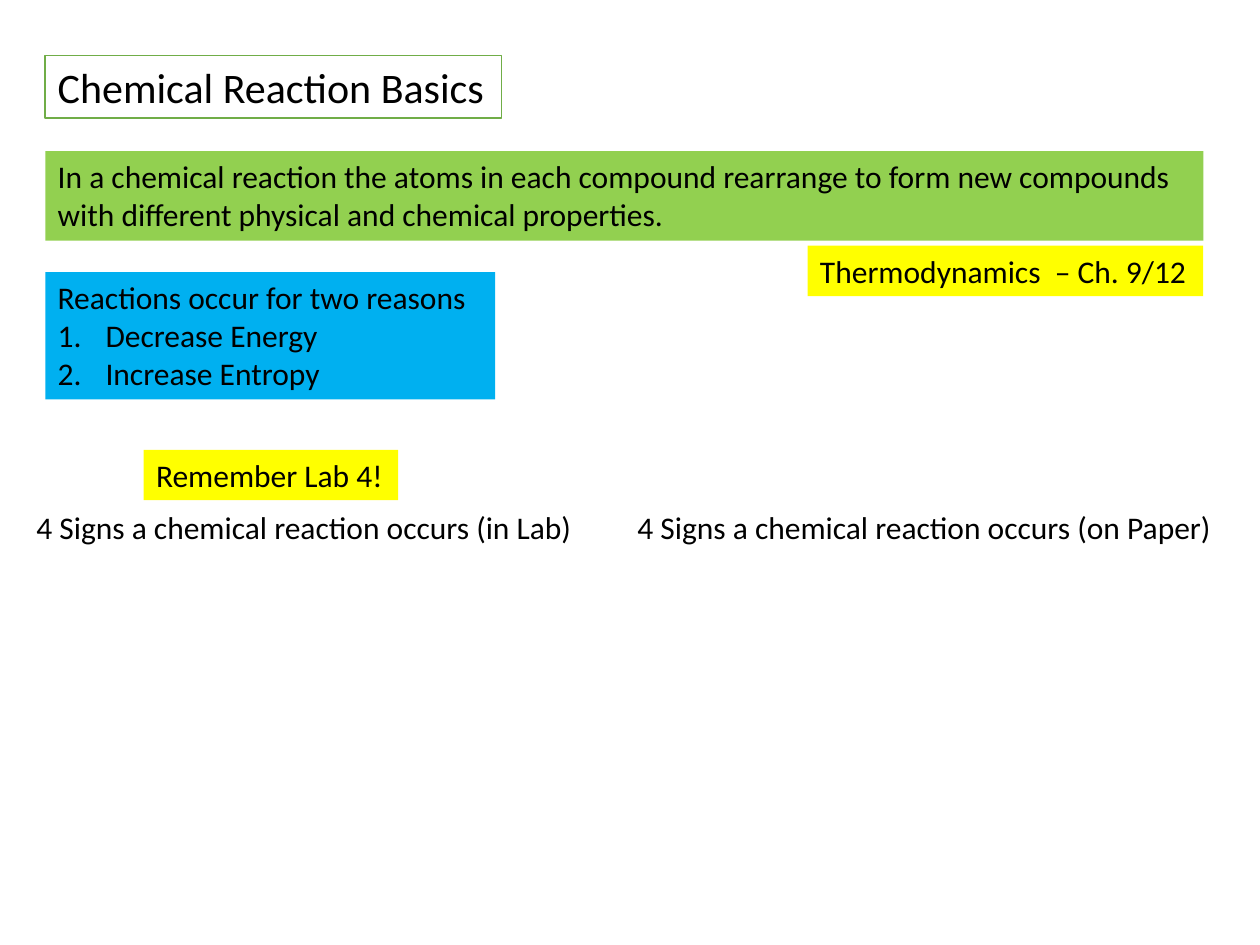
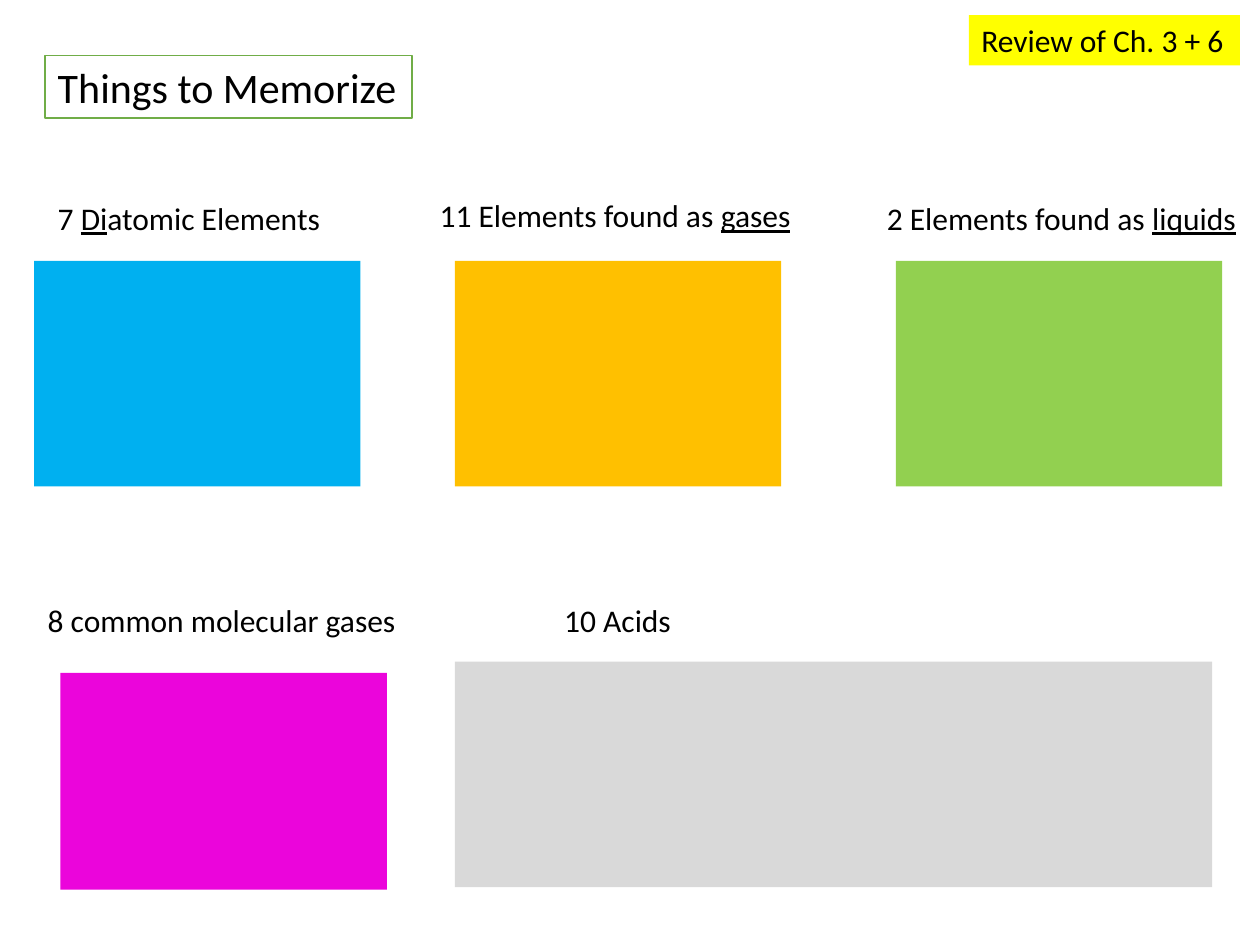
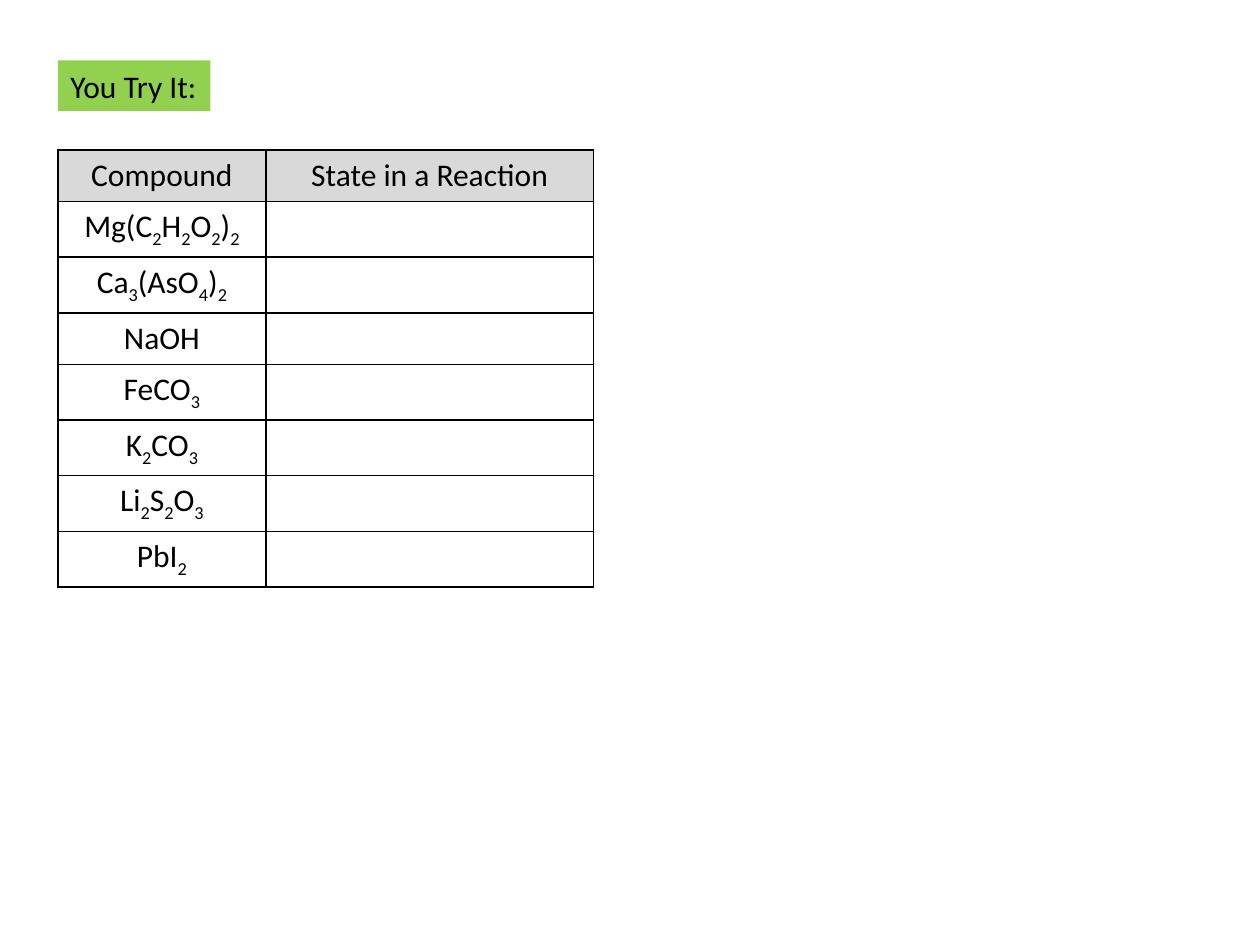
"""Build three chemistry slides on reactions, facts to memorize and a practice table."""
from itertools import groupby

from lxml import etree
from pptx import Presentation
from pptx import util as u
from pptx.dml.color import RGBColor
from pptx.enum import shapes, text
from pptx.oxml.ns import qn

FONT = "Calibri"
COLORS = {
    "ink": "000000", "paper": "FFFFFF", "title_edge": "70AD47", "green": "92D050",
    "blue": "00B0F0", "yellow": "FFFF00", "orange": "FFC000", "grey": "D9D9D9",
    "magenta": "EB05DB",
}
BODY_SIZE, TITLE_SIZE = 18, 24
LABEL_HEIGHT = 0.4
PANEL_WIDTH, PANEL_HEIGHT = 2.59, 1.79
FORMULAS = ["Mg(C2H2O2)2", "Ca3(AsO4)2", "NaOH", "FeCO3", "K2CO3", "Li2S2O3", "PbI2"]


def color(name):
    """Return the named colour."""
    return RGBColor.from_string(COLORS[name])


def paint(target, fill):
    """Give a shape or a cell a solid fill."""
    target.fill.solid()
    target.fill.fore_color.rgb = color(fill)


def add_run(paragraph, words, size=BODY_SIZE):
    """Append one run in the shared font and return it."""
    run = paragraph.add_run()
    run.text = words
    run.font.name = FONT
    run.font.size = u.Pt(size)
    run.font.color.rgb = color("ink")
    return run


def add_underlined(paragraph, words, size):
    """Write words, underlining what stands between bars."""
    for index, part in enumerate(words.split("|")):
        run = add_run(paragraph, part, size)
        if index % 2:
            run.font.underline = True


def add_formula(paragraph, formula):
    """Write a chemical formula with its digits as subscripts."""
    for is_count, symbols in groupby(formula, str.isdigit):
        run = add_run(paragraph, "".join(symbols))
        if is_count:
            run.font._element.set("baseline", "-25000")


def number_paragraph(paragraph):
    """Turn a paragraph into an item of a numbered list."""
    properties = paragraph._p.get_or_add_pPr()
    properties.set("marL", str(u.Inches(0.38)))
    properties.set("indent", str(-u.Inches(0.38)))
    etree.SubElement(properties, qn("a:buFont"), typeface="+mj-lt")
    etree.SubElement(properties, qn("a:buAutoNum"), type="arabicPeriod")


def add_label(slide, words, left, top, width, height=LABEL_HEIGHT, fill=None,
              size=BODY_SIZE, wrap=False, steps=()):
    """Add a text box, optionally filled and followed by numbered steps."""
    label = slide.shapes.add_textbox(*map(u.Inches, (left, top, width, height)))
    if fill:
        paint(label, fill)
    frame = label.text_frame
    frame.word_wrap = wrap
    frame.auto_size = text.MSO_AUTO_SIZE.SHAPE_TO_FIT_TEXT
    add_underlined(frame.paragraphs[0], words, size)
    for step in steps:
        item = frame.add_paragraph()
        number_paragraph(item)
        add_run(item, step)
    return label


def add_title(slide, words, width):
    """Add the outlined slide title."""
    title = add_label(slide, words, 0.36, 0.44, width, 0.5, "paper", TITLE_SIZE)
    title.line.color.rgb = color("title_edge")
    title.line.width = u.Pt(1)


def add_panel(slide, fill, left, top, width=PANEL_WIDTH, height=PANEL_HEIGHT):
    """Add an empty coloured answer panel."""
    panel = slide.shapes.add_shape(
        shapes.MSO_SHAPE.RECTANGLE, *map(u.Inches, (left, top, width, height)))
    panel.shadow.inherit = False
    paint(panel, fill)
    panel.line.fill.background()


def add_borders(cell):
    """Draw a thin line on all four sides of a cell."""
    properties = cell._tc.get_or_add_tcPr()
    for side in ("lnL", "lnR", "lnT", "lnB"):
        edge = etree.SubElement(properties, qn(f"a:{side}"), w=str(u.Pt(1)))
        ink = etree.SubElement(edge, qn("a:solidFill"))
        etree.SubElement(ink, qn("a:srgbClr"), val=COLORS["ink"])


def add_state_table(slide):
    """Add the table of compounds with blank states."""
    row_count, row_height, widths = len(FORMULAS) + 1, 0.41, (1.65, 2.6)
    states = slide.shapes.add_table(
        row_count, 2, u.Inches(0.46), u.Inches(1.19),
        u.Inches(sum(widths)), u.Inches(row_height * row_count)).table
    states.first_row = states.horz_banding = False
    for column, width in zip(states.columns, widths):
        column.width = u.Inches(width)
    for row in states.rows:
        row.height = u.Inches(row_height)
    for cell in states.iter_cells():
        add_borders(cell)
        cell.fill.background()
        cell.text_frame.paragraphs[0].alignment = text.PP_ALIGN.CENTER
    for column, heading in enumerate(("Compound", "State in a Reaction")):
        cell = states.cell(0, column)
        paint(cell, "grey")
        add_run(cell.text_frame.paragraphs[0], heading)
    for row, formula in enumerate(FORMULAS, 1):
        add_formula(states.cell(row, 0).text_frame.paragraphs[0], formula)


def build_basics(slide):
    """Fill the slide on reaction basics."""
    add_title(slide, "Chemical Reaction Basics", 3.62)
    add_label(slide, "4 Signs a chemical reaction occurs (on Paper)", 4.96, 3.98, 4.81)
    add_label(slide, "4 Signs a chemical reaction occurs (in Lab)", 0.19, 3.98, 4.5)
    add_label(slide, "In a chemical reaction the atoms in each compound rearrange to form "
              "new compounds with different physical and chemical properties.",
              0.36, 1.2, 9.19, 0.71, "green", wrap=True)
    add_label(slide, "Reactions occur for two reasons", 0.36, 2.16, 3.57, 1.01, "blue",
              wrap=True, steps=("Decrease Energy", "Increase Entropy"))
    add_label(slide, "Remember Lab 4!", 1.14, 3.57, 2.02, fill="yellow")
    add_label(slide, "Thermodynamics  – Ch. 9/12", 6.41, 1.95, 3.14, fill="yellow")


def build_memorize(slide):
    """Fill the slide on things to memorize."""
    add_title(slide, "Things to Memorize", 2.91)
    add_label(slide, "Review of Ch. 3 + 6", 7.69, 0.12, 2.15, fill="yellow")
    add_label(slide, "7 |Di|atomic Elements", 0.36, 1.53, 2.5)
    add_label(slide, "11 Elements found as |gases", 3.39, 1.51, 3.02)
    add_label(slide, "2 Elements found as |liquids| ", 6.94, 1.53, 3.14)
    for fill, left in (("blue", 0.27), ("orange", 3.61), ("green", 7.11)):
        add_panel(slide, fill, left, 2.07)
    add_label(slide, "10 Acids", 4.38, 4.72, 1.06)
    add_panel(slide, "grey", 3.61, 5.25, width=6.01)
    add_label(slide, "8 common molecular gases", 0.28, 4.72, 2.99)
    add_panel(slide, "magenta", 0.48, 5.34, height=1.72)


def build_practice(slide):
    """Fill the practice slide."""
    add_label(slide, "You Try It:", 0.46, 0.48, 1.21, fill="green")
    add_state_table(slide)


def main():
    """Build and save the deck."""
    deck = Presentation()
    deck.slide_width, deck.slide_height = u.Inches(10), u.Inches(7.5)
    for build in (build_basics, build_memorize, build_practice):
        build(deck.slides.add_slide(deck.slide_layouts[6]))
    deck.save("out.pptx")


if __name__ == "__main__":
    main()
